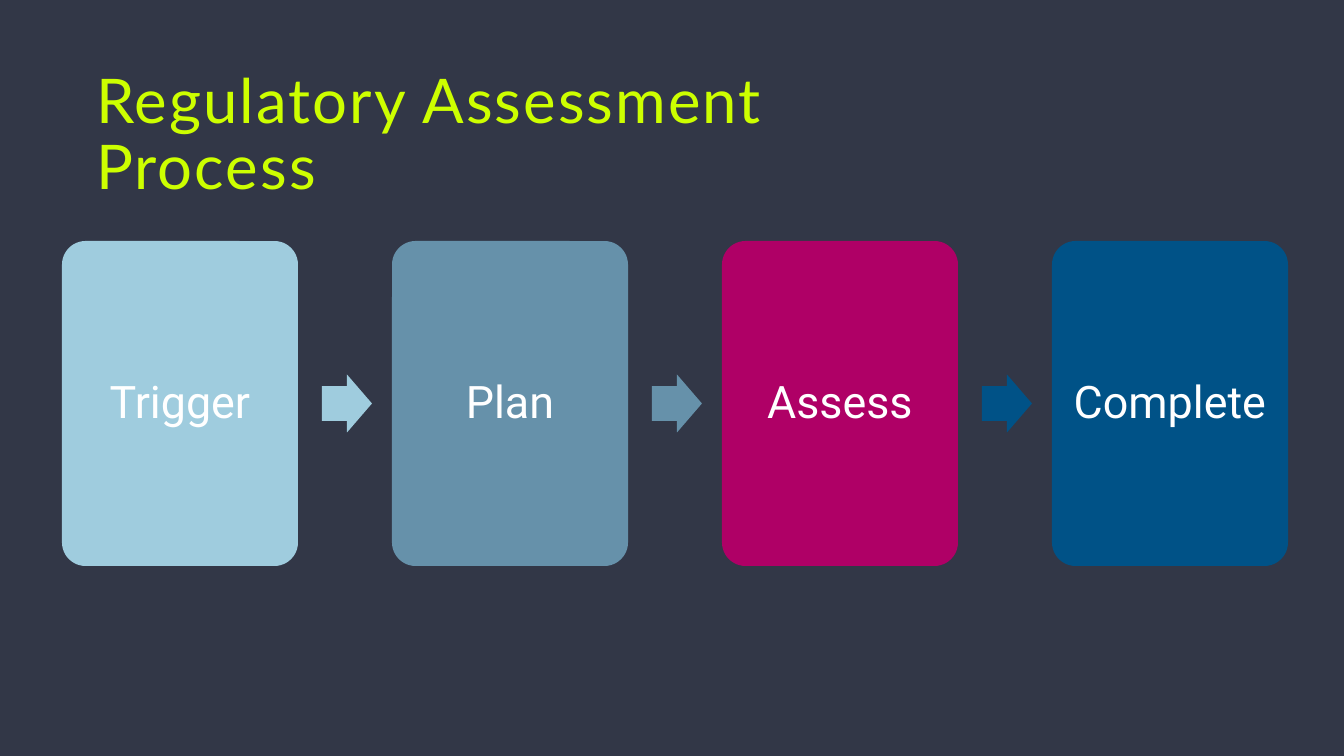
from dataclasses import dataclass

from pptx import Presentation
from pptx.dml.color import RGBColor
from pptx.enum.shapes import MSO_SHAPE
from pptx.enum.text import MSO_ANCHOR, PP_ALIGN
from pptx.util import Emu, Pt


@dataclass(frozen=True)
class Theme:
    background: str = "323747"
    title: str = "CDFF00"
    label: str = "FFFFFF"
    title_font: str = "Lato"
    label_font: str = "Roboto"
    title_size: int = 44
    label_size: int = 32
    line_spacing: float = 0.9


THEME = Theme()
STEPS = [
    ("Trigger", "9FCCDE"),
    ("Plan", "6691AA"),
    ("Assess", "AF0066"),
    ("Complete", "005287"),
]
ARROW_COLOURS = ["9FCCDE", "6691AA", "005287"]

CARD_LEFT, CARD_TOP, CARD_WIDTH, CARD_HEIGHT = 62, 241, 236, 325
CARD_PITCH = 330
ARROW_WIDTH, ARROW_HEIGHT = 50, 58
ARROW_GAP = 24


def px(length):
    return Emu(round(length * 914400 / 100.8))


def style_paragraph(para, font_name, size, colour, align):
    para.alignment = align
    para.line_spacing = THEME.line_spacing
    para.space_before = Pt(0)
    para.font.name = font_name
    para.font.size = Pt(size)
    para.font.color.rgb = RGBColor.from_string(colour)


def set_title(page, text):
    title = page.shapes.title
    title.left, title.top, title.width, title.height = map(px, (86, 85, 876, 103))
    frame = title.text_frame
    frame.text = text
    frame.word_wrap = True
    frame.vertical_anchor = MSO_ANCHOR.MIDDLE
    para = frame.paragraphs[0]
    style_paragraph(para, THEME.title_font, THEME.title_size, THEME.title, PP_ALIGN.LEFT)
    para.runs[0].font._element.set("spc", "150")


def add_block(page, preset, left, top, width, height, colour, adjustments):
    block = page.shapes.add_shape(preset, px(left), px(top), px(width), px(height))
    for index, value in enumerate(adjustments):
        block.adjustments[index] = value
    block.shadow.inherit = False
    block.fill.solid()
    block.fill.fore_color.rgb = RGBColor.from_string(colour)
    block.line.fill.background()
    return block


def add_card(page, left, label, colour):
    card = add_block(page, MSO_SHAPE.ROUNDED_RECTANGLE, left, CARD_TOP,
                     CARD_WIDTH, CARD_HEIGHT, colour, [0.1])
    frame = card.text_frame
    frame.word_wrap = True
    frame.vertical_anchor = MSO_ANCHOR.MIDDLE
    frame.margin_left = frame.margin_right = px(12)
    frame.margin_top = frame.margin_bottom = px(12)
    frame.text = label
    style_paragraph(frame.paragraphs[0], THEME.label_font, THEME.label_size,
                    THEME.label, PP_ALIGN.CENTER)


def add_arrow(page, left, colour):
    top = CARD_TOP + (CARD_HEIGHT - ARROW_HEIGHT) / 2
    add_block(page, MSO_SHAPE.RIGHT_ARROW, left, top,
              ARROW_WIDTH, ARROW_HEIGHT, colour, [0.6, 0.5])


def main():
    deck = Presentation()
    deck.slide_width, deck.slide_height = px(1344), px(756)
    page = deck.slides.add_slide(deck.slide_layouts[5])
    page.background.fill.solid()
    page.background.fill.fore_color.rgb = RGBColor.from_string(THEME.background)

    set_title(page, "Regulatory Assessment Process")
    for index, (label, colour) in enumerate(STEPS):
        add_card(page, CARD_LEFT + index * CARD_PITCH, label, colour)
    for index, colour in enumerate(ARROW_COLOURS):
        add_arrow(page, CARD_LEFT + index * CARD_PITCH + CARD_WIDTH + ARROW_GAP, colour)

    deck.save("out.pptx")


if __name__ == "__main__":
    main()
